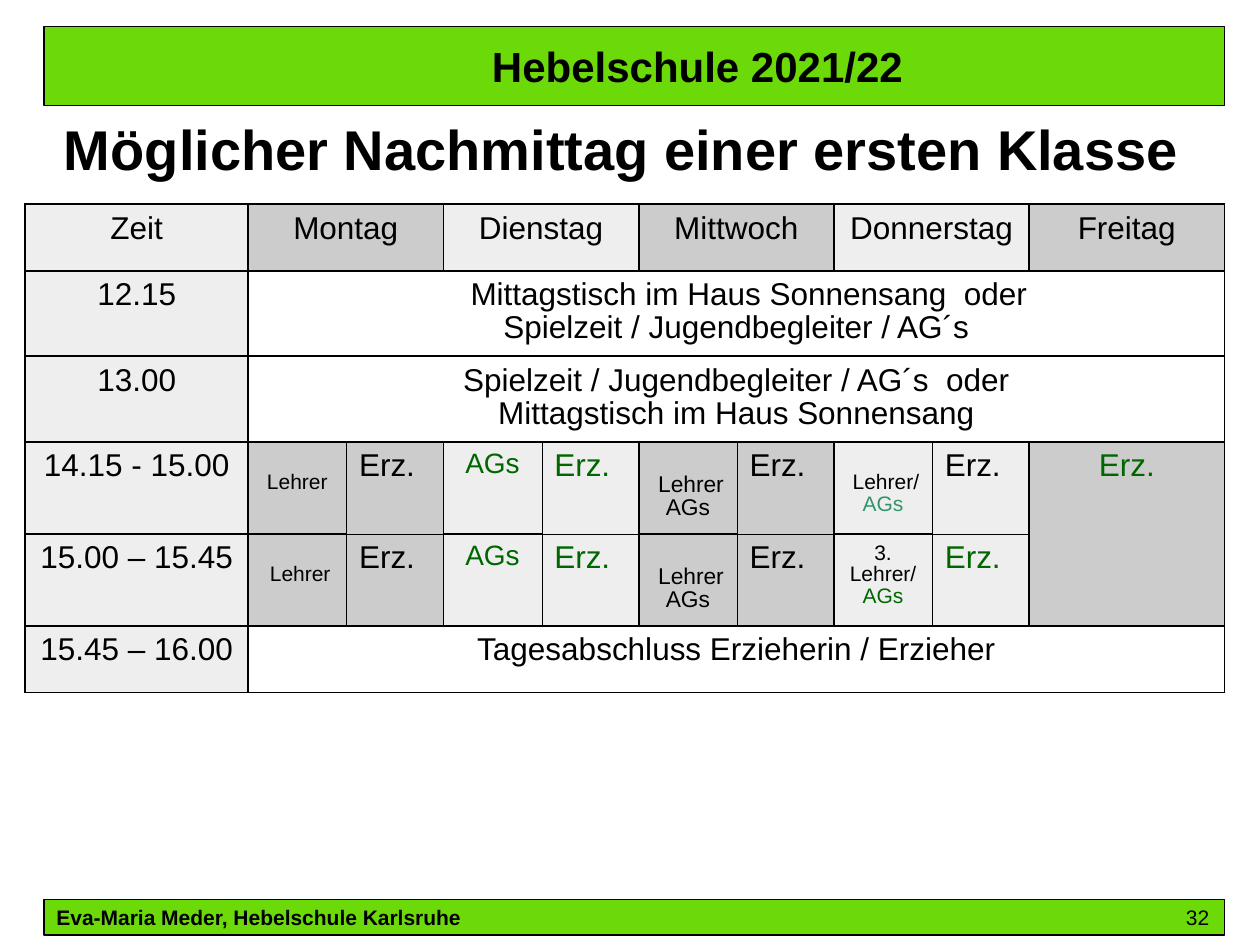
"""Build the afternoon timetable slide for a first-year class."""
from dataclasses import dataclass
from typing import Optional

from lxml.etree import SubElement
from pptx import Presentation
from pptx.dml.color import RGBColor
from pptx.enum.shapes import MSO_SHAPE as Shape
from pptx.enum.text import MSO_ANCHOR as Anchor, PP_ALIGN as Align
from pptx.oxml.ns import qn
from pptx.util import Inches, Pt


@dataclass(frozen=True)
class Theme:
    font: str = "Arial"
    black: str = "000000"
    white: str = "FFFFFF"
    banner: str = "6CDA08"
    light: str = "EEEEEE"
    dark: str = "CCCCCC"
    green: str = "006600"
    teal: str = "32946A"
    title: int = 32
    heading: int = 24
    body: int = 18
    group: int = 16
    mid: int = 13
    small: int = 12
    thick: float = 1.13
    hair: float = 0.06
    spacing: float = 0.93


T = Theme()


@dataclass(frozen=True)
class Line:
    text: str
    size: int = T.body
    color: str = T.black
    indent: float = 0


@dataclass(frozen=True)
class Entry:
    row: int
    col: int
    lines: tuple[Line, ...]
    fill: str
    top: float = 0.07
    align: Align = Align.CENTER
    rows: int = 1
    cols: int = 1


COL_WIDTHS = [1.77] + [0.78, 0.77] * 5
ROW_HEIGHTS = [0.53, 0.67, 0.67, 0.73, 0.73, 0.53]
DAYS = ["Montag", "Dienstag", "Mittwoch", "Donnerstag", "Freitag"]
TIMES = ["Zeit", "12.15", "13.00", "14.15 - 15.00", "15.00 – 15.45", "15.45 – 16.00"]
SHARED = {
    1: (Line("Mittagstisch im Haus Sonnensang  oder", indent=0.2),
        Line("Spielzeit / Jugendbegleiter / AG´s")),
    2: (Line("Spielzeit / Jugendbegleiter / AG´s  oder"),
        Line("Mittagstisch im Haus Sonnensang")),
    5: (Line("Tagesabschluss Erzieherin / Erzieher"),),
}
AGS = (Line("AGs", T.group, T.green),)
TEACHER_AGS = (Line(" Lehrer", T.mid), Line("AGs", T.mid))
LESSONS = {
    3: [((Line("Lehrer", T.small),), 0.24, T.black),
        (AGS, 0.07, T.green),
        (TEACHER_AGS, 0.25, T.black),
        ((Line(" Lehrer/", T.small), Line("AGs", T.small, T.teal)), 0.24, T.black)],
    4: [((Line(" Lehrer", T.small),), 0.24, T.black),
        (AGS, 0.07, T.green),
        (TEACHER_AGS, 0.25, T.black),
        ((Line("3. Lehrer/", T.small), Line("AGs", T.small, T.green)), 0.07, T.green)],
}


def day_fill(day: int) -> str:
    """Return the alternating shade of a weekday."""
    return T.light if day % 2 else T.dark


def timetable() -> list[Entry]:
    """List every filled cell of the timetable."""
    entries = [Entry(i, 0, (Line(time),), T.light) for i, time in enumerate(TIMES)]
    entries += [Entry(0, 1 + 2 * d, (Line(day),), day_fill(d), cols=2)
                for d, day in enumerate(DAYS)]
    entries += [Entry(i, 1, lines, T.white, cols=10) for i, lines in SHARED.items()]
    for row, lessons in LESSONS.items():
        for d, (lines, top, color) in enumerate(lessons):
            entries.append(Entry(row, 1 + 2 * d, lines, day_fill(d), top))
            entries.append(Entry(row, 2 + 2 * d, (Line("Erz.", color=color),),
                                 day_fill(d), align=Align.LEFT))
    entries.append(Entry(3, 9, (Line("Erz.", color=T.green),), T.dark, rows=2, cols=2))
    return entries


def add_run(p, text: str, size: int, color: str = T.black, bold: bool = False) -> None:
    """Add one formatted run to a paragraph."""
    r = p.add_run()
    r.text = text
    for name, value in {"name": T.font, "size": Pt(size), "bold": bold}.items():
        setattr(r.font, name, value)
    r.font.color.rgb = RGBColor.from_string(color)


def add_banner(slide, top: float, height: float, left_inset: float = 0.1):
    """Draw a green bar and return its first paragraph."""
    sp = slide.shapes.add_shape(Shape.RECTANGLE, Inches(0.35), Inches(top),
                                Inches(9.37), Inches(height))
    sp.shadow.inherit = False
    sp.fill.solid()
    sp.fill.fore_color.rgb = RGBColor.from_string(T.banner)
    sp.line.color.rgb = RGBColor.from_string(T.black)
    sp.line.width = Pt(0.75)
    tf = sp.text_frame
    for name, value in {"word_wrap": True, "vertical_anchor": Anchor.MIDDLE,
                        "margin_left": Inches(left_inset)}.items():
        setattr(tf, name, value)
    return tf.paragraphs[0]


def set_borders(cell, **widths: float) -> None:
    """Draw the four cell borders, thick unless a side is given."""
    tcPr = cell._tc.get_or_add_tcPr()
    for side in "LRTB":
        width = Pt(widths.get(side, T.thick))
        ln = SubElement(tcPr, qn(f"a:ln{side}"), w=str(int(width)))
        SubElement(SubElement(ln, qn("a:solidFill")), qn("a:srgbClr"), val=T.black)


def half_borders(entry: Entry) -> dict[str, float]:
    """Return the hairline sides of a split day cell."""
    if entry.row not in LESSONS or entry.col == 0 or entry.cols > 1:
        return {}
    return dict.fromkeys("R" if entry.col % 2 else "LTB", T.hair)


def fill_cell(table, entry: Entry) -> None:
    """Merge, outline, shade and write one timetable entry."""
    cell = table.cell(entry.row, entry.col)
    last_row, last_col = entry.row + entry.rows, entry.col + entry.cols
    if entry.rows * entry.cols > 1:
        cell.merge(table.cell(last_row - 1, last_col - 1))
    for row in range(entry.row, last_row):
        for col in range(entry.col, last_col):
            part = table.cell(row, col)
            set_borders(part, **half_borders(entry))
            part.fill.solid()
            part.fill.fore_color.rgb = RGBColor.from_string(entry.fill)
    cell.margin_top = Inches(entry.top)
    tf = cell.text_frame
    for i, line in enumerate(entry.lines):
        p = tf.add_paragraph() if i else tf.paragraphs[0]
        p.alignment, p.line_spacing = entry.align, T.spacing
        if line.indent:
            p._p.get_or_add_pPr().set("marL", str(Inches(line.indent)))
        add_run(p, line.text, line.size, line.color)


def add_timetable(slide) -> None:
    """Add the timetable with its grid and entries."""
    table = slide.shapes.add_table(
        len(ROW_HEIGHTS), len(COL_WIDTHS), Inches(0.2), Inches(1.62),
        Inches(sum(COL_WIDTHS)), Inches(sum(ROW_HEIGHTS))).table
    table.first_row = table.horz_banding = False
    for column, width in zip(table.columns, COL_WIDTHS):
        column.width = Inches(width)
    for row, height in zip(table.rows, ROW_HEIGHTS):
        row.height = Inches(height)
    for entry in timetable():
        fill_cell(table, entry)


def add_footer(slide, author: str, number: Optional[str]) -> None:
    """Add the bottom bar with the page number at a right tab."""
    p = add_banner(slide, 7.14, 0.28)
    p.alignment = Align.LEFT
    tabs = SubElement(p._p.get_or_add_pPr(), qn("a:tabLst"))
    SubElement(tabs, qn("a:tab"), pos=str(Inches(9.15)), algn="r")
    add_run(p, author + "\t", T.small, bold=True)
    add_run(p, number, T.small)


def main() -> None:
    """Build and save the slide."""
    prs = Presentation()
    prs.slide_width, prs.slide_height = Inches(10), Inches(7.5)
    s = prs.slides.add_slide(prs.slide_layouts[6])
    p = add_banner(s, 0.21, 0.63, left_inset=1.1)
    p.alignment = Align.CENTER
    add_run(p, "Hebelschule 2021/22", T.heading, bold=True)
    add_footer(s, "Eva-Maria Meder, Hebelschule Karlsruhe", "32")
    tf = s.shapes.add_textbox(Inches(0.41), Inches(0.86), Inches(9.24), Inches(0.64)).text_frame
    tf.word_wrap = True
    add_run(tf.paragraphs[0], "Möglicher Nachmittag einer ersten Klasse", T.title, bold=True)
    add_timetable(s)
    prs.save("out.pptx")


if __name__ == "__main__":
    main()
